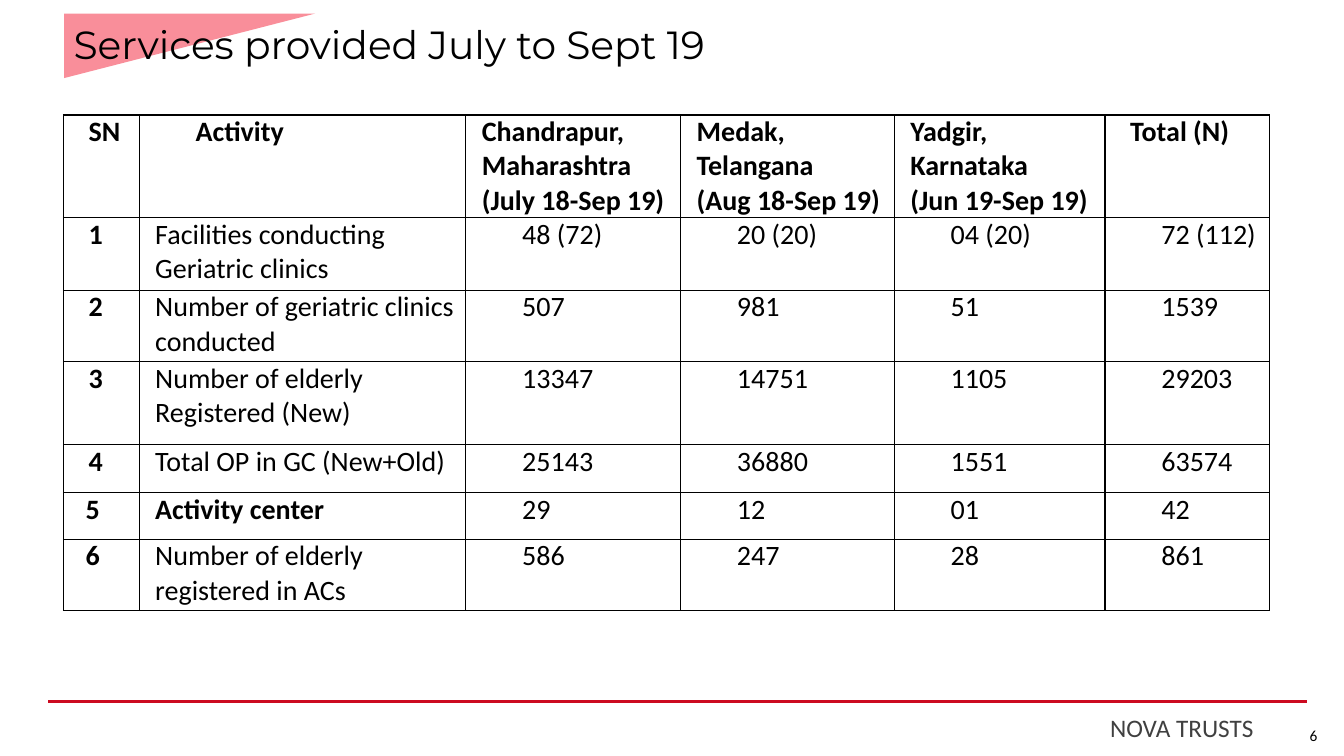
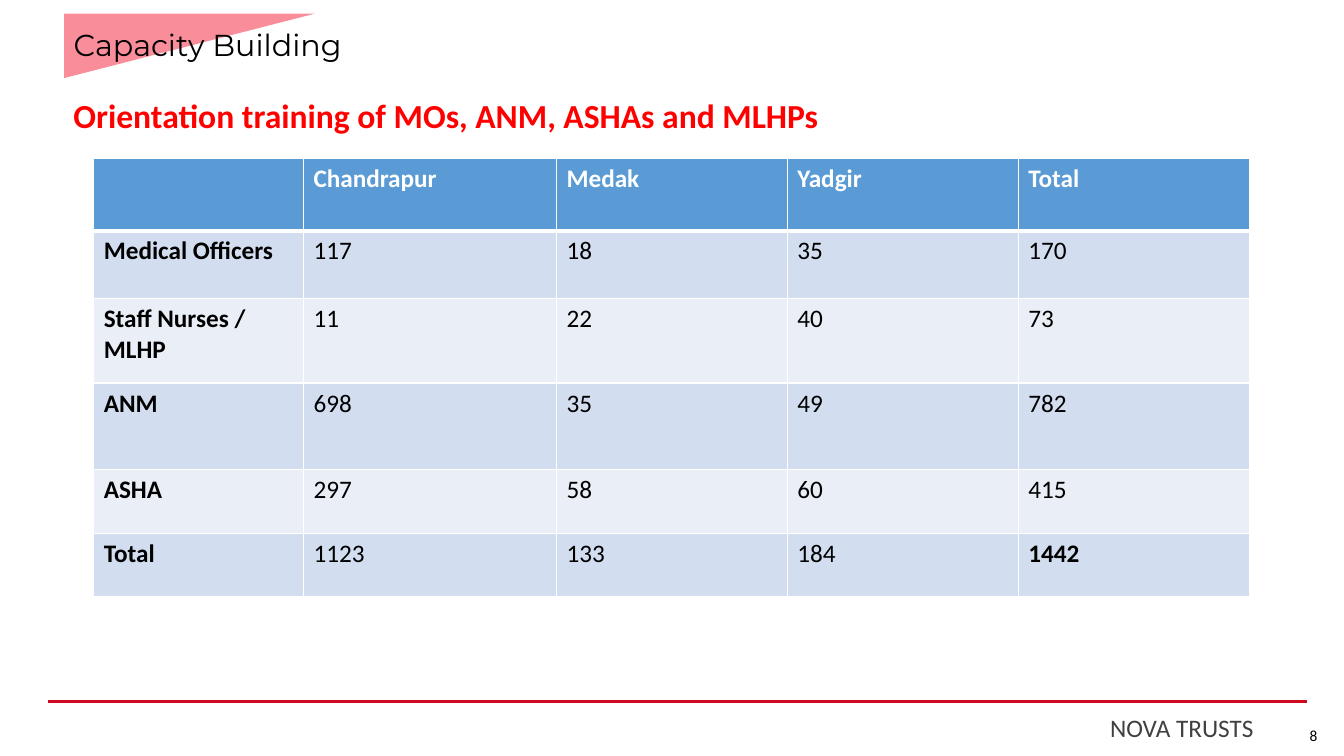
from lxml import etree
from pptx import Presentation
from pptx import util as u
from pptx.dml.color import RGBColor
from pptx.enum import shapes, text
from pptx.oxml.ns import qn

BLACK, WHITE, RED = "000000", "FFFFFF", "FF0000"
PINK, CRIMSON, GREY = "F98E9A", "CC0A20", "404040"
BLUE, BANDS = "5B9BD5", ("D2DEEF", "EAEFF7")

SERVICES = [
    ("SN", "Activity", "Chandrapur,\nMaharashtra\n(July 18-Sep 19)",
     "Medak,\nTelangana\n(Aug 18-Sep 19)", "Yadgir,\nKarnataka\n(Jun 19-Sep 19)", "Total (N)"),
    ("1", "Facilities conducting Geriatric clinics", "48 (72)", "20 (20)", "04 (20)", "72 (112)"),
    ("2", "Number of geriatric clinics conducted", "507", "981", "51", "1539"),
    ("3", "Number of elderly Registered (New)", "13347", "14751", "1105", "29203"),
    ("4", "Total OP in GC (New+Old)", "25143", "36880", "1551", "63574"),
    ("5", "Activity center", "29", "12", "01", "42"),
    ("6", "Number of elderly registered in ACs", "586", "247", "28", "861"),
]
TRAINING = [
    ("", "Chandrapur", "Medak", "Yadgir", "Total"),
    ("Medical Officers", "117", "18", "35", "170"),
    ("Staff Nurses / MLHP", "11", "22", "40", "73"),
    ("ANM", "698", "35", "49", "782"),
    ("ASHA", "297", "58", "60", "415"),
    ("Total", "1123", "133", "184", "1442"),
]


def rgb(value):
    """Turn a hex string into a colour."""
    return RGBColor.from_string(value)


def write(frame, words, size=18, font="Calibri", color=BLACK, bold=False,
          spacing=None, indent=0, inset=None):
    """Fill a text frame, one paragraph per line of text."""
    frame.word_wrap = True
    if inset is not None:
        frame.margin_left = frame.margin_right = u.Inches(inset)
        frame.margin_top = frame.margin_bottom = u.Inches(inset)
    for number, line in enumerate(words.split("\n")):
        paragraph = frame.add_paragraph() if number else frame.paragraphs[0]
        paragraph.alignment = text.PP_ALIGN.LEFT
        if spacing:
            paragraph.line_spacing = spacing
        if indent:
            paragraph._p.get_or_add_pPr().set("marL", str(u.Inches(indent)))
        run = paragraph.add_run()
        run.text = line
        run.font.size, run.font.name, run.font.bold = u.Pt(size), font, bold
        run.font.color.rgb = rgb(color)


def draw_borders(cell, color, **widths):
    """Draw the four borders of a cell, 1 point wide unless given."""
    properties = cell._tc.get_or_add_tcPr()
    for side in "LRTB":
        edge = etree.SubElement(properties, qn(f"a:ln{side}"), w=str(u.Pt(widths.get(side, 1))))
        paint = etree.SubElement(edge, qn("a:solidFill"))
        etree.SubElement(paint, qn("a:srgbClr"), val=color)


class Deck:
    """Holds the shared style and the slide being built."""

    def __init__(self):
        self.show = Presentation()
        self.show.slide_width, self.show.slide_height = u.Inches(13.33), u.Inches(7.5)
        self.slide = None

    def new_slide(self, title, number, title_size):
        """Start a slide with the corner wedge, title, rule and footer."""
        self.slide = self.show.slides.add_slide(self.show.slide_layouts[5])
        self.wedge(1.56, -0.79, 0.64, 2.49)
        self.rule(0.48, 12.96, 6.96)
        self.label("NOVA TRUSTS", 10.96, 7.02, 2.02, 0.38, color=GREY, inset=0.05)
        self.title(title, title_size)
        self.label(number, 12.89, 7.15, 0.45, 0.4, size=11)

    def title(self, words, size):
        """Place the title in front of the wedge."""
        heading = self.slide.shapes.title
        heading.left, heading.top = u.Inches(0.63), u.Inches(0.1)
        heading.width, heading.height = u.Inches(11.5), u.Inches(0.72)
        frame = heading.text_frame
        frame.auto_size = text.MSO_AUTO_SIZE.NONE
        frame.vertical_anchor = text.MSO_ANCHOR.MIDDLE
        write(frame, words, size=size, font="Montserrat", spacing=0.9)
        self.slide.shapes._spTree.append(heading._element)

    def wedge(self, *box):
        """Draw the pink triangle in the corner."""
        corner = self.slide.shapes.add_shape(
            shapes.MSO_SHAPE.RIGHT_TRIANGLE, *map(u.Inches, box))
        corner.rotation = 90
        corner.shadow.inherit = False
        corner.fill.solid()
        corner.fill.fore_color.rgb = rgb(PINK)
        corner.line.fill.background()

    def rule(self, start, end, height):
        """Draw the horizontal line above the footer."""
        divider = self.slide.shapes.add_connector(
            shapes.MSO_CONNECTOR.STRAIGHT, *map(u.Inches, (start, height, end, height)))
        divider.line.color.rgb = rgb(CRIMSON)
        divider.line.width = u.Pt(2.25)
        etree.SubElement(divider._element.spPr, qn("a:effectLst"))

    def label(self, words, *box, **style):
        """Add a text box."""
        write(self.slide.shapes.add_textbox(*map(u.Inches, box)).text_frame, words, **style)

    def table(self, rows, left, top, widths, heights, dress):
        """Add a table whose cells are each formatted by dress."""
        box = map(u.Inches, (left, top, sum(widths), sum(heights)))
        grid = self.slide.shapes.add_table(len(rows), len(widths), *box).table
        for column, width in zip(grid.columns, widths):
            column.width = u.Inches(width)
        for r, (row, height) in enumerate(zip(rows, heights)):
            grid.rows[r].height = u.Inches(height)
            for c, words in enumerate(row):
                cell = grid.cell(r, c)
                style = dress(cell, r, c)
                if words:
                    write(cell.text_frame, words, **style)


def dress_service(cell, r, c):
    """Format a cell of the services table."""
    cell.margin_left = cell.margin_right = u.Inches(0.06)
    cell.margin_top = cell.margin_bottom = 0
    draw_borders(cell, BLACK)
    cell.fill.background()
    if c == 0:
        indent = 0.16 if r > 4 else 0.19
    elif r == 0:
        indent = {1: 0.5, 5: 0.19}.get(c, 0.1)
    else:
        indent = 0.1 if c == 1 else 0.5
    return {"size": 20, "bold": r == 0 or c == 0 or (r, c) == (5, 1), "indent": indent}


def dress_training(cell, r, c):
    """Format a cell of the training table."""
    draw_borders(cell, WHITE, T=3 if r == 1 else 1, B=3 if r == 0 else 1)
    cell.fill.solid()
    cell.fill.fore_color.rgb = rgb(BANDS[(r - 1) % 2] if r else BLUE)
    return {"color": BLACK if r else WHITE, "bold": r == 0 or c == 0 or (r, c) == (5, 4)}


def main():
    """Build both slides and save them."""
    deck = Deck()
    deck.new_slide("Services provided July to Sept 19", "6", 28)
    deck.table(SERVICES, 0.63, 1.14, (0.75, 3.24, 2.13, 2.12, 2.09, 1.63),
               (1.02, 0.72, 0.71, 0.82, 0.48, 0.46, 0.71), dress_service)
    deck.new_slide("Capacity Building", "8", 21.6)
    deck.label("Orientation training of MOs, ANM, ASHAs and MLHPs", 0.63, 0.94, 11.5, 0.46,
               size=24, color=RED, bold=True, spacing=0.9)
    deck.table(TRAINING, 0.93, 1.57, (2.08, 2.51, 2.29, 2.29, 2.29),
               (0.72, 0.67, 0.84, 0.86, 0.63, 0.63), dress_training)
    deck.show.save("out.pptx")


if __name__ == "__main__":
    main()
